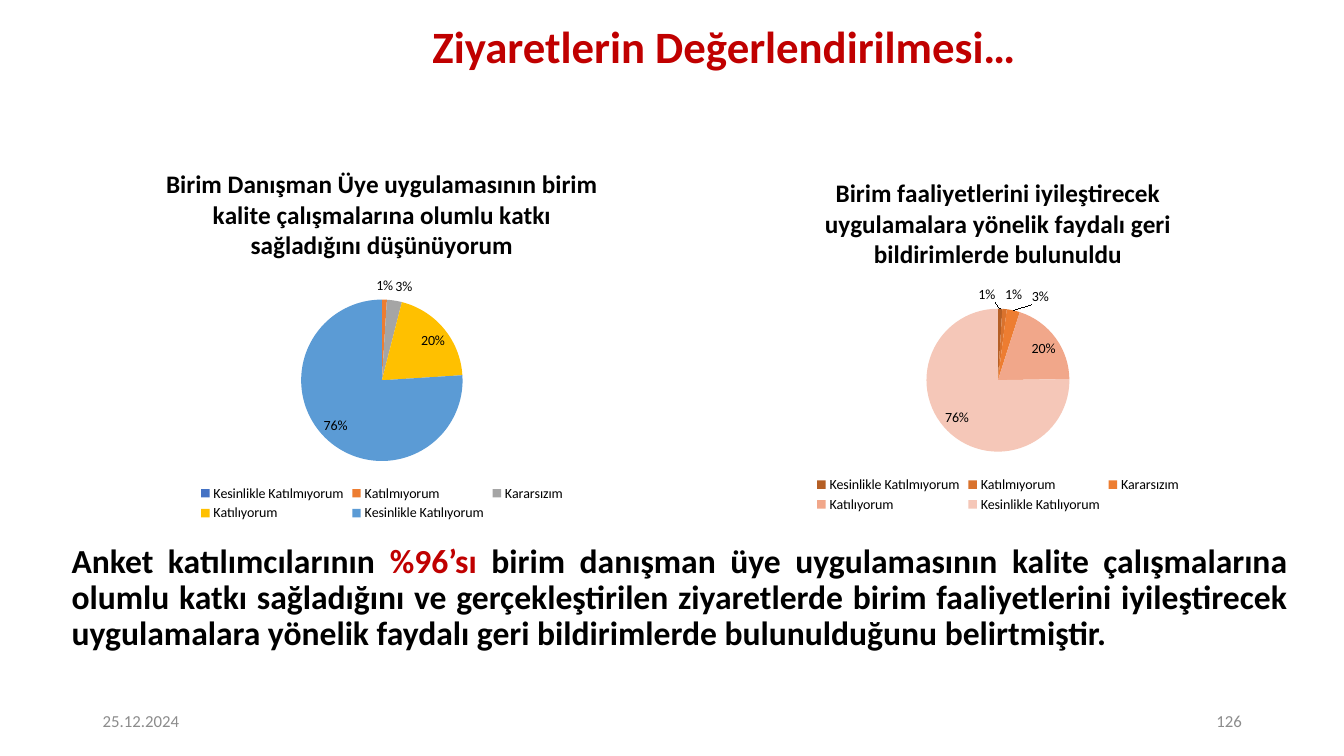
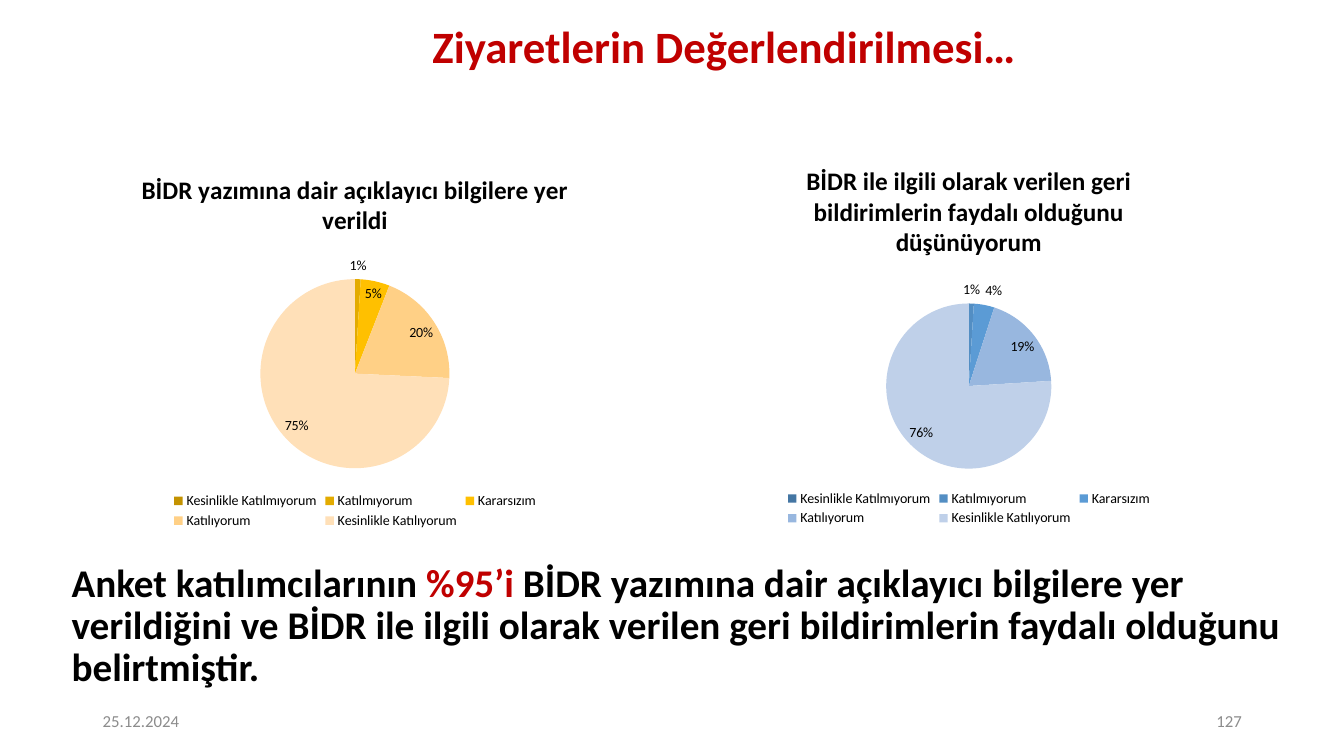
import pptx
import pptx.chart.data
import pptx.dml.color
import pptx.enum.chart
import pptx.enum.text
import pptx.oxml
import pptx.oxml.ns
import pptx.util

Cm = pptx.util.Cm
Pt = pptx.util.Pt
RGBColor = pptx.dml.color.RGBColor
ALIGN = pptx.enum.text.PP_ALIGN
ANCHOR = pptx.enum.text.MSO_ANCHOR

RED = RGBColor(0xC0, 0x00, 0x00)
BLACK = RGBColor(0x00, 0x00, 0x00)
GREY = RGBColor(0x8C, 0x8C, 0x8C)
BLUE = RGBColor(0x5B, 0x9B, 0xD5)
ORANGE = RGBColor(0xED, 0x7D, 0x31)
GOLD = RGBColor(0xFF, 0xC0, 0x00)
MIXED = [RGBColor(0x44, 0x72, 0xC4), ORANGE, RGBColor(0xA5, 0xA5, 0xA5), GOLD, BLUE]
ORANGES = [RGBColor(0xB5, 0x5F, 0x25), RGBColor(0xD9, 0x72, 0x2D), ORANGE,
           RGBColor(0xF1, 0xA7, 0x8A), RGBColor(0xF5, 0xC7, 0xB8)]
GOLDS = [RGBColor(0xC3, 0x92, 0x00), RGBColor(0xE3, 0xAB, 0x00), GOLD,
         RGBColor(0xFF, 0xD0, 0x86), RGBColor(0xFF, 0xE0, 0xB8)]
BLUES = [RGBColor(0x44, 0x76, 0xA3), RGBColor(0x53, 0x8E, 0xC3), BLUE,
         RGBColor(0x98, 0xB7, 0xDF), RGBColor(0xBF, 0xD0, 0xE9)]

FONT = "Calibri"
TITLE = "Ziyaretlerin Değerlendirilmesi…"
DATE = "25.12.2024"
ANSWERS = ["Kesinlikle Katılmıyorum", "Katılmıyorum", "Kararsızım",
           "Katılıyorum", "Kesinlikle Katılıyorum"]


class Deck:
    """Hold the shared style and the current slide."""

    def __init__(self):
        self.file = pptx.Presentation()
        self.file.slide_width, self.file.slide_height = Cm(33.87), Cm(19.05)
        self.slide = None

    def style(self, font, size, color, bold=False):
        font.name, font.size, font.bold = FONT, Pt(size), bold
        font.color.rgb = color

    def text(self, para, words, size, color, bold=False):
        run = para.add_run()
        run.text = words
        self.style(run.font, size, color, bold)

    def place(self, shape, box):
        shape.left, shape.top, shape.width, shape.height = map(Cm, box)
        frame = shape.text_frame
        frame.word_wrap = True
        frame.auto_size = pptx.enum.text.MSO_AUTO_SIZE.NONE
        return frame

    def start(self, number):
        self.slide = self.file.slides.add_slide(self.file.slide_layouts[1])
        frame = self.place(self.slide.shapes.title, (4.88, 0.23, 26.75, 2.01))
        frame.vertical_anchor = ANCHOR.MIDDLE
        para = frame.paragraphs[0]
        para.alignment, para.line_spacing = ALIGN.CENTER, 0.9
        self.text(para, TITLE, 32, RED, True)
        self.footer(2.34, DATE, ALIGN.LEFT)
        self.footer(23.93, number, ALIGN.RIGHT)

    def footer(self, left, words, align):
        box = (left, 17.65, 7.62, 1.02)
        frame = self.place(self.slide.shapes.add_textbox(*map(Cm, box)), box)
        frame.vertical_anchor = ANCHOR.MIDDLE
        para = frame.paragraphs[0]
        para.alignment = align
        self.text(para, words, 12, GREY)

    def body(self, box, size, align, runs):
        frame = self.place(self.slide.placeholders[1], box)
        frame.vertical_anchor = ANCHOR.TOP
        para = frame.paragraphs[0]
        para.alignment, para.line_spacing, para.space_before = align, 0.9, Pt(0)
        props = para._p.get_or_add_pPr()
        props.set("marL", str(Cm(0.64)))
        props.set("indent", "0")
        props.append(pptx.oxml.parse_xml(
            f'<a:buNone {pptx.oxml.ns.nsdecls("a")}/>'))
        for words, color in runs:
            self.text(para, words, size, color, True)

    def pie(self, box, title, values, colors, top, size):
        data = pptx.chart.data.CategoryChartData()
        data.categories = ANSWERS
        data.add_series("Series 1", values)
        chart = self.slide.shapes.add_chart(
            pptx.enum.chart.XL_CHART_TYPE.PIE, *map(Cm, box), data).chart
        self.style(chart.font, 10, BLACK)
        chart.has_title = True
        self.text(chart.chart_title.text_frame.paragraphs[0], title, 18, BLACK, True)
        chart.has_legend = True
        chart.legend.position = pptx.enum.chart.XL_LEGEND_POSITION.BOTTOM
        chart.legend.include_in_layout = False
        plot = chart.plots[0]
        plot.vary_by_categories = True
        for index, color in enumerate(colors):
            fill = plot.series[0].points[index].format.fill
            fill.solid()
            fill.fore_color.rgb = color
        plot.has_data_labels = True
        labels = plot.data_labels
        labels.show_value, labels.show_percentage = True, False
        labels.number_format, labels.number_format_is_linked = '0"%";;', False
        labels.position = pptx.enum.chart.XL_LABEL_POSITION.BEST_FIT
        self.style(labels.font, 10, BLACK)
        self.layout(chart, top, size, size * box[3] / box[2])

    def layout(self, chart, top, high, wide):
        area = chart.element.find(".//" + pptx.oxml.ns.qn("c:plotArea"))
        for old in area.findall(pptx.oxml.ns.qn("c:layout")):
            area.remove(old)
        sides = {"x": 0.5 - wide / 2, "y": top, "w": wide, "h": high}
        parts = "".join(f'<c:{key}Mode val="edge"/>' for key in "xy")
        parts += "".join(f'<c:{key} val="{side:.3f}"/>' for key, side in sides.items())
        area.insert(0, pptx.oxml.parse_xml(
            f'<c:layout {pptx.oxml.ns.nsdecls("c")}><c:manualLayout>'
            f'<c:layoutTarget val="inner"/>{parts}</c:manualLayout></c:layout>'))


def main():
    deck = Deck()
    deck.start("126")
    deck.body((0.91, 13.59, 31.8, 3.84), 24, ALIGN.JUSTIFY, [
        ("Anket katılımcılarının ", BLACK),
        ("%96’sı ", RED),
        ("birim danışman üye uygulamasının kalite çalışmalarına olumlu katkı "
         "sağladığını ve gerçekleştirilen ziyaretlerde birim faaliyetlerini "
         "iyileştirecek uygulamalara yönelik faydalı geri bildirimlerde "
         "bulunulduğunu belirtmiştir.", BLACK)])
    deck.pie((2.36, 3.76, 14.53, 9.47),
             "Birim Danışman Üye uygulamasının birim kalite çalışmalarına "
             "olumlu katkı sağladığını düşünüyorum",
             [0, 1, 3, 20, 76], MIXED, 0.4, 0.43)
    deck.pie((18.85, 3.99, 12.6, 9.02),
             "Birim faaliyetlerini iyileştirecek uygulamalara yönelik "
             "faydalı geri bildirimlerde bulunuldu",
             [1, 1, 3, 20, 76], ORANGES, 0.42, 0.4)

    deck.start("127")
    deck.body((0.91, 14.07, 32.39, 3.63), 28, ALIGN.LEFT, [
        ("Anket katılımcılarının ", BLACK),
        ("%95’i ", RED),
        ("BİDR yazımına dair açıklayıcı bilgilere yer verildiğini ve BİDR ile "
         "ilgili olarak verilen geri bildirimlerin faydalı olduğunu "
         "belirtmiştir.", BLACK)])
    deck.pie((18.14, 3.68, 12.55, 9.68),
             "BİDR ile ilgili olarak verilen geri bildirimlerin faydalı "
             "olduğunu düşünüyorum",
             [0, 1, 4, 19, 76], BLUES, 0.41, 0.43)
    deck.pie((1.68, 3.89, 14.53, 9.53),
             "BİDR yazımına dair açıklayıcı bilgilere yer verildi",
             [0, 1, 5, 20, 75], GOLDS, 0.33, 0.5)
    deck.file.save("out.pptx")


if __name__ == "__main__":
    main()
